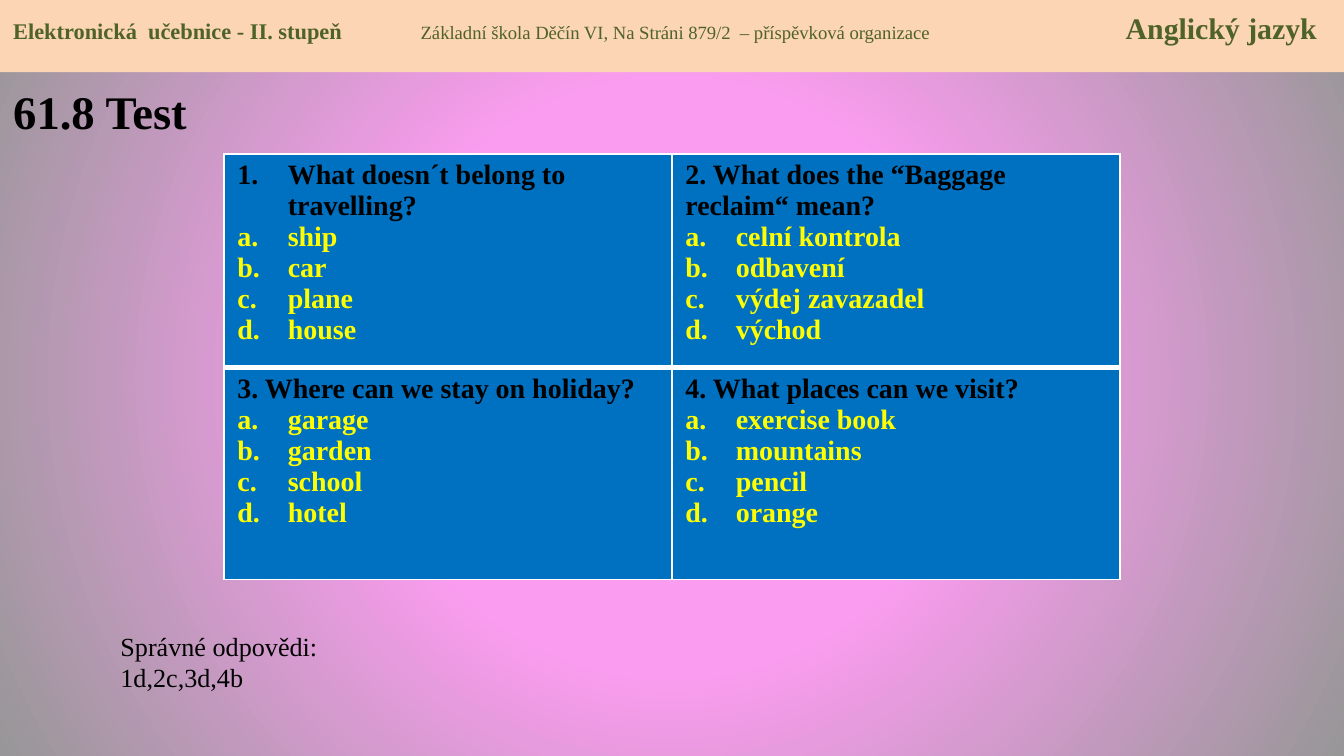
"""Build the English travel test slide with its answer key."""
import lxml.etree
import pptx
import pptx.dml.color
import pptx.enum.shapes
import pptx.enum.text
import pptx.oxml.ns
import pptx.util

Pt = pptx.util.Pt
RGB = pptx.dml.color.RGBColor
qn = pptx.oxml.ns.qn
PINK = RGB(0xFA, 0x9C, 0xEF)
GRAY = RGB(0x97, 0x97, 0x97)
PEACH = RGB(0xFC, 0xD5, 0xB5)
GREEN = RGB(0x4F, 0x62, 0x28)
BLUE = RGB(0x00, 0x70, 0xC0)
YELLOW = RGB(0xFF, 0xFF, 0x00)
BLACK = RGB(0, 0, 0)
WHITE = RGB(0xFF, 0xFF, 0xFF)


def add_run(para, text, size, color, bold=False):
    run = para.add_run()
    run.text = text
    run.font.name = "Times New Roman"
    run.font.size = Pt(size)
    run.font.bold = bold
    run.font.color.rgb = color


def add_node(parent, tag, **attrs):
    node = lxml.etree.SubElement(parent, qn(tag))
    for key, value in attrs.items():
        node.set(key, str(value))
    return node


deck = pptx.Presentation()
deck.slide_width = Pt(720)
deck.slide_height = Pt(405)
slide = deck.slides.add_slide(deck.slide_layouts[6])

back = slide.background.fill
back.gradient()
for stop, place, color in zip(back.gradient_stops, (0.38, 1), (PINK, GRAY)):
    stop.position = place
    stop.color.rgb = color
grad = slide.element.find(".//" + qn("a:gradFill"))
grad.remove(grad.find(qn("a:lin")))
circle = add_node(grad, "a:path", path="circle")
add_node(circle, "a:fillToRect", l=50000, t=50000, r=50000, b=50000)

band = slide.shapes.add_shape(
    pptx.enum.shapes.MSO_SHAPE.RECTANGLE, 0, 0, Pt(720), Pt(38.7))
band.shadow.inherit = False
band.fill.solid()
band.fill.fore_color.rgb = PEACH
band.line.fill.background()
frame = band.text_frame
frame.vertical_anchor = pptx.enum.text.MSO_ANCHOR.TOP
frame.margin_top = Pt(5)
frame.margin_right = 0
head = frame.paragraphs[0]
head.alignment = pptx.enum.text.PP_ALIGN.LEFT
tabs = add_node(head._p.get_or_add_pPr(), "a:tabLst")
for place in (218.3, 596):
    add_node(tabs, "a:tab", pos=Pt(place), algn="l")
add_run(head, "Elektronická  učebnice - II. stupeň\t", 12, GREEN, True)
add_run(head, "Základní škola Děčín VI, Na Stráni 879/2  – příspěvková organizace\t",
        10, GREEN)
add_run(head, "Anglický jazyk", 16, GREEN, True)

notes = [
    (0, 41, 115, 37.5, 25, True, ["61.8 Test"]),
    (57.4, 334, 121, 41, 14, False, ["Správné odpovědi:", "1d,2c,3d,4b"]),
]
for left, top, width, height, size, bold, lines in notes:
    box = slide.shapes.add_textbox(Pt(left), Pt(top), Pt(width), Pt(height))
    frame = box.text_frame
    frame.word_wrap = False
    for i, line in enumerate(lines):
        para = frame.add_paragraph() if i else frame.paragraphs[0]
        add_run(para, line, size, BLACK, bold)

tasks = [
    ("What doesn´t belong to travelling?", ["ship", "car", "plane", "house"]),
    ("2. What does the “Baggage reclaim“ mean?",
     ["celní kontrola", "odbavení", "výdej zavazadel", "východ"]),
    ("3. Where can we stay on holiday?",
     ["garage", "garden", "school", "hotel"]),
    ("4. What places can we visit?",
     ["exercise book", "mountains", "pencil", "orange"]),
]
table = slide.shapes.add_table(
    2, 2, Pt(120), Pt(82.6), Pt(480), Pt(226.8)).table
table.first_row = False
table.horz_banding = False
for row in table.rows:
    row.height = Pt(113.4)

for n, (title, options) in enumerate(tasks):
    row, col = divmod(n, 2)
    cell = table.cell(row, col)
    cell.margin_top = cell.margin_bottom = Pt(3.2)
    cell.fill.solid()
    cell.fill.fore_color.rgb = BLUE
    props = cell._tc.get_or_add_tcPr()
    widths = {"L": 1, "R": 1, "T": 3 if row else 1, "B": 1 if row else 3}
    for i, (side, width) in enumerate(widths.items()):
        line = add_node(props, "a:ln" + side, w=Pt(width))
        props.insert(i, line)
        add_node(add_node(line, "a:solidFill"), "a:srgbClr", val=WHITE)
    for i, text in enumerate([title] + options):
        para = cell.text_frame.add_paragraph() if i else cell.text_frame.paragraphs[0]
        if i or n == 0:
            form = para._p.get_or_add_pPr()
            form.set("marL", str(Pt(27)))
            form.set("indent", str(-Pt(27)))
            add_node(form, "a:buFont", typeface="+mj-lt")
            add_node(form, "a:buAutoNum",
                     type="alphaLcPeriod" if i else "arabicPeriod")
        add_run(para, text, 15, YELLOW if i else BLACK, True)

deck.save("out.pptx")
